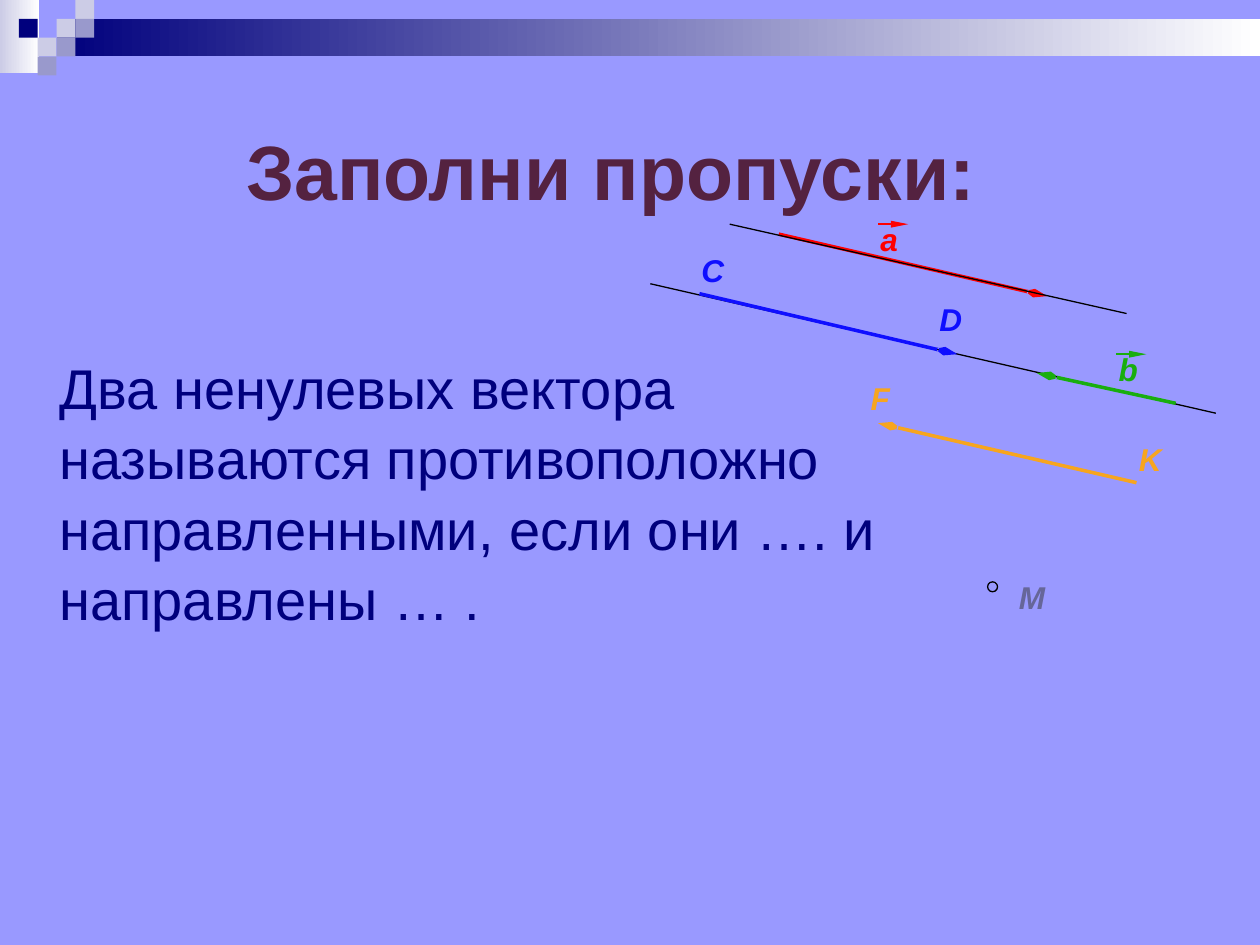
from lxml import etree
from pptx import Presentation
from pptx.dml.color import RGBColor
from pptx.enum.shapes import MSO_CONNECTOR, MSO_SHAPE
from pptx.enum.text import MSO_ANCHOR, PP_ALIGN
from pptx.oxml.ns import qn
from pptx.util import Cm, Pt

STRAIGHT = MSO_CONNECTOR.STRAIGHT
RECTANGLE, OVAL = MSO_SHAPE.RECTANGLE, MSO_SHAPE.OVAL
TOP, MIDDLE = MSO_ANCHOR.TOP, MSO_ANCHOR.MIDDLE
LEFT, CENTER = PP_ALIGN.LEFT, PP_ALIGN.CENTER

THEME = {
    "font": "Arial",
    "background": "9999FF", "title": "542240", "navy": "00007D",
    "pale": "CCCCE6", "muted": "9999CC", "white": "FFFFFF",
    "black": "000000", "blue": "0F0FFF", "orange": "F7A51F",
    "green": "19AE0E", "red": "FF0000", "slate": "666699",
    "title_size": 44, "body_size": 32, "label_size": 18,
    "thin": 0.75, "mark": 1.25, "vector": 2,
}

# Content; all lengths in centimetres
TITLE = "Заполни пропуски:"
BODY = ("Два ненулевых вектора называются противоположно направленными, "
        "если они …. и направлены … .")

BANDS = [  # left, top, width, height, start colour
    (0, 0, 0.79, 1.47, "pale"),
    (1.14, 0.38, 24.26, 0.76, "navy"),
]
CELL = 0.38
CELLS = [  # column, row, colour
    (3, 1, "pale"), (4, 0, "pale"), (4, 1, "muted"), (2, 2, "pale"),
    (1, 1, "navy"), (3, 2, "muted"), (2, 3, "muted"),
]
LINES = [  # start, end, colour, weight, arrowhead
    ((24.51, 8.33), (13.11, 5.72), "black", "thin", None),
    ((14.1, 5.92), (19.3, 7.14), "blue", "vector", "arrow"),
    ((22.91, 9.73), (17.7, 8.53), "orange", "vector", "arrow"),
    ((23.7, 8.13), (20.9, 7.52), "green", "vector", "arrow"),
    ((22.5, 7.14), (23.11, 7.14), "green", "mark", "triangle"),
    ((15.7, 4.72), (21.11, 5.97), "red", "vector", "arrow"),
    ((14.71, 4.52), (22.71, 6.32), "black", "thin", None),
    ((17.7, 4.52), (18.31, 4.52), "red", "mark", "triangle"),
]
LABEL_HEIGHT = 1.02
LABELS = [  # text, left, top, width, colour
    ("F", 17.3, 7.52, 1.6, "orange"), ("K", 22.71, 8.74, 1.6, "orange"),
    ("b", 22.3, 6.93, 1.4, "green"), ("a", 17.5, 4.32, 1.4, "red"),
    ("C", 13.89, 4.93, 1.4, "blue"), ("D", 18.69, 5.92, 1.2, "blue"),
    ("M", 20.29, 11.53, 1.2, "slate"),
]
POINT_M = (19.91, 11.73, 0.2, 0.2)


def color(name):
    return RGBColor.from_string(THEME[name])


def apply(target, values):
    for name, value in values.items():
        setattr(target, name, value)


def place(shape, left, top, width, height):
    apply(shape, {"left": Cm(left), "top": Cm(top),
                  "width": Cm(width), "height": Cm(height)})


def write(box, text, ink, size, frame_format, para_format, **font_format):
    frame = box.text_frame
    apply(frame, {"word_wrap": True, **frame_format})
    para = frame.paragraphs[0]
    apply(para, para_format)
    span = para.add_run()
    span.text = text
    apply(span.font, {"name": THEME["font"], "size": Pt(THEME[size]), **font_format})
    span.font.color.rgb = color(ink)


def add_plain_shape(page, kind, area, fill):
    shape = page.shapes.add_shape(kind, *map(Cm, area))
    shape.shadow.inherit = False
    shape.fill.solid()
    shape.fill.fore_color.rgb = color(fill)
    shape.line.fill.background()
    return shape


def add_band(page, left, top, width, height, start):
    band = add_plain_shape(page, RECTANGLE, (left, top, width, height), start)
    band.fill.gradient()
    band.fill.gradient_angle = 0
    for stop, name in zip(band.fill.gradient_stops, (start, "white")):
        stop.color.rgb = color(name)


def add_line(page, start, end, ink, weight, head):
    line = page.shapes.add_connector(STRAIGHT, *map(Cm, start + end))
    line.line.color.rgb = color(ink)
    line.line.width = Pt(THEME[weight])
    if head:
        etree.SubElement(line.line._get_or_add_ln(), qn("a:tailEnd"),
                         type=head, w="sm", len="lg")
    etree.SubElement(line._element.spPr, qn("a:effectLst"))


def main():
    deck = Presentation()
    deck.slide_width, deck.slide_height = Cm(25.4), Cm(19.05)
    page = deck.slides.add_slide(deck.slide_layouts[5])
    page.background.fill.solid()
    page.background.fill.fore_color.rgb = color("background")

    # Corner ornament
    for band in BANDS:
        add_band(page, *band)
    for column, row, fill in CELLS:
        add_plain_shape(page, RECTANGLE, (column * CELL, row * CELL, CELL, CELL), fill)

    # Title and sentence
    title = page.shapes.title
    place(title, 0.89, 1.52, 22.86, 3.81)
    write(title, TITLE, "title", "title_size", {"vertical_anchor": MIDDLE},
          {"alignment": CENTER}, bold=True)
    body = page.shapes.add_textbox(0, Cm(6.93), Cm(18.69), Cm(13.59))
    write(body, BODY, "navy", "body_size",
          {"vertical_anchor": TOP, "margin_left": Cm(1.2)},
          {"alignment": LEFT, "line_spacing": 1.05, "space_before": Pt(1.5)})

    # Vectors and their carrier lines
    for line in LINES:
        add_line(page, *line)

    # Point M and letter labels
    point = add_plain_shape(page, OVAL, POINT_M, "background")
    point.line.color.rgb = color("black")
    point.line.width = Pt(THEME["thin"])
    for text, left, top, width, ink in LABELS:
        label = page.shapes.add_textbox(*map(Cm, (left, top, width, LABEL_HEIGHT)))
        write(label, text, ink, "label_size", {"vertical_anchor": TOP},
              {"alignment": LEFT, "space_before": Pt(2)}, bold=True, italic=True)

    deck.save("out.pptx")


if __name__ == "__main__":
    main()
